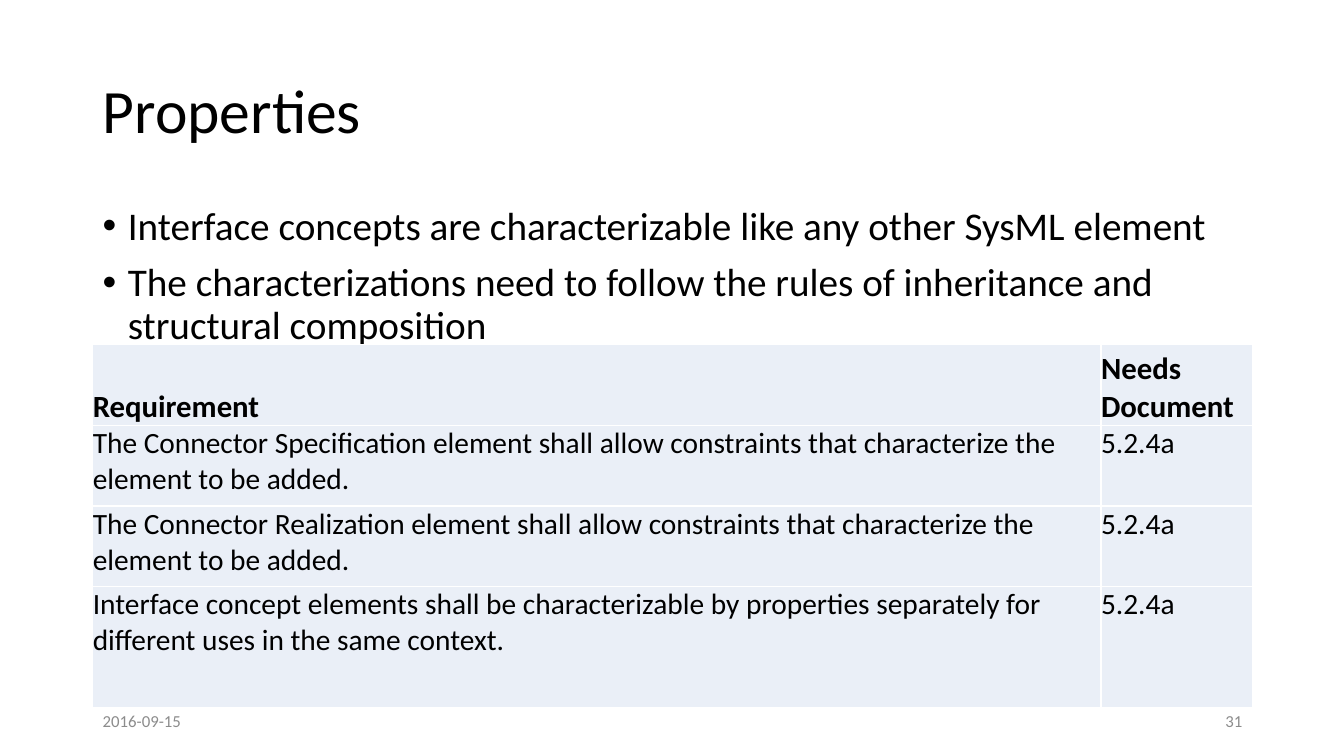
from lxml import etree
from pptx import Presentation
from pptx.dml.color import RGBColor
from pptx.enum.text import MSO_ANCHOR, MSO_AUTO_SIZE, PP_ALIGN
from pptx.oxml.ns import qn
from pptx.util import Inches, Pt

TOP, MIDDLE, BOTTOM = MSO_ANCHOR.TOP, MSO_ANCHOR.MIDDLE, MSO_ANCHOR.BOTTOM
LEFT, RIGHT = PP_ALIGN.LEFT, PP_ALIGN.RIGHT
NO_AUTOFIT = MSO_AUTO_SIZE.NONE

FONT = "Calibri"
COLORS = {"text": "000000", "footer": "8C8C8C", "cell": "EAEFF7", "border": "FFFFFF"}

# Page grid, in inches
SLIDE_W, SLIDE_H = 13.33, 7.5
MARGIN = 0.92
CONTENT_W = 11.5
FOOTER_TOP, FOOTER_W, FOOTER_H = 6.95, 3, 0.4
TABLE_TOP = 3.42
COLUMN_WIDTHS = [10, 1.5]
ROW_HEIGHTS = [0.8, 0.8, 0.8, 1.2]

BULLETS = [
    "Interface concepts are characterizable like any other SysML element",
    "The characterizations need to follow the rules of inheritance and structural composition",
]
REQUIREMENTS = [
    ("Requirement", "Needs Document"),
    ("The Connector Specification element shall allow constraints that "
     "characterize the element to be added.", "5.2.4a"),
    ("The Connector Realization element shall allow constraints that "
     "characterize the element to be added.", "5.2.4a"),
    ("Interface concept elements shall be characterizable by properties "
     "separately for different uses in the same context.", "5.2.4a"),
]


def rgb(name):
    return RGBColor.from_string(COLORS[name])


def style(paragraph, size, color="text", bold=False, align=LEFT):
    font = paragraph.font
    font.name, font.size, font.bold = FONT, Pt(size), bold
    font.color.rgb = rgb(color)
    paragraph.alignment = align


def set_frame(frame, anchor):
    frame.word_wrap = True
    frame.auto_size = NO_AUTOFIT
    frame.vertical_anchor = anchor


def add_title(slide, text):
    title = slide.shapes.title
    title.left, title.top = Inches(MARGIN), Inches(0.4)
    title.width, title.height = Inches(CONTENT_W), Inches(1.45)
    set_frame(title.text_frame, MIDDLE)
    title.text_frame.text = text
    heading = title.text_frame.paragraphs[0]
    style(heading, 44)
    heading.line_spacing = 0.9


def add_text(slide, left, top, width, height, lines, anchor=TOP):
    box = slide.shapes.add_textbox(*map(Inches, (left, top, width, height)))
    set_frame(box.text_frame, anchor)
    box.text_frame.text = "\n".join(lines)
    return box.text_frame.paragraphs


def add_bullets(slide, lines):
    for paragraph in add_text(slide, MARGIN, 2, CONTENT_W, 4.76, lines):
        style(paragraph, 28)
        paragraph.line_spacing = 0.9
        paragraph.space_before = Pt(10)
        # Hanging bullet
        props = paragraph._p.get_or_add_pPr()
        props.set("marL", str(Inches(0.25)))
        props.set("indent", str(-Inches(0.25)))
        etree.SubElement(props, qn("a:buFont"), typeface="Arial")
        etree.SubElement(props, qn("a:buChar"), char="•")


def add_footer(slide, left, text, align):
    for paragraph in add_text(slide, left, FOOTER_TOP, FOOTER_W, FOOTER_H, [text], MIDDLE):
        style(paragraph, 12, "footer", align=align)


def add_borders(cell):
    props = cell._tc.get_or_add_tcPr()
    for side in ("lnL", "lnR", "lnT", "lnB"):
        line = etree.SubElement(props, qn(f"a:{side}"), w=str(Pt(1)))
        fill = etree.SubElement(line, qn("a:solidFill"))
        etree.SubElement(fill, qn("a:srgbClr"), val=COLORS["border"])


def fill_cell(cell, text, is_header):
    cell.margin_left = cell.margin_right = cell.margin_top = cell.margin_bottom = 0
    cell.vertical_anchor = BOTTOM if is_header else TOP
    add_borders(cell)
    cell.fill.solid()
    cell.fill.fore_color.rgb = rgb("cell")
    cell.text = text
    style(cell.text_frame.paragraphs[0], 22 if is_header else 21, bold=is_header)


def add_requirements(slide, rows):
    frame = slide.shapes.add_table(
        len(rows), len(COLUMN_WIDTHS), Inches(MARGIN), Inches(TABLE_TOP),
        Inches(sum(COLUMN_WIDTHS)), Inches(sum(ROW_HEIGHTS)))
    table = frame.table
    for column, width in zip(table.columns, COLUMN_WIDTHS):
        column.width = Inches(width)
    for r, (row, height) in enumerate(zip(table.rows, ROW_HEIGHTS)):
        row.height = Inches(height)
        for cell, text in zip(row.cells, rows[r]):
            fill_cell(cell, text, is_header=r == 0)


def main():
    prs = Presentation()
    prs.slide_width, prs.slide_height = Inches(SLIDE_W), Inches(SLIDE_H)
    slide = prs.slides.add_slide(prs.slide_layouts[5])

    # Heading and main points
    add_title(slide, "Properties")
    add_bullets(slide, BULLETS)

    # Date and page number
    add_footer(slide, MARGIN, "2016-09-15", LEFT)
    add_footer(slide, MARGIN + CONTENT_W - FOOTER_W, "31", RIGHT)

    # Requirements table
    add_requirements(slide, REQUIREMENTS)
    prs.save("out.pptx")


if __name__ == "__main__":
    main()
